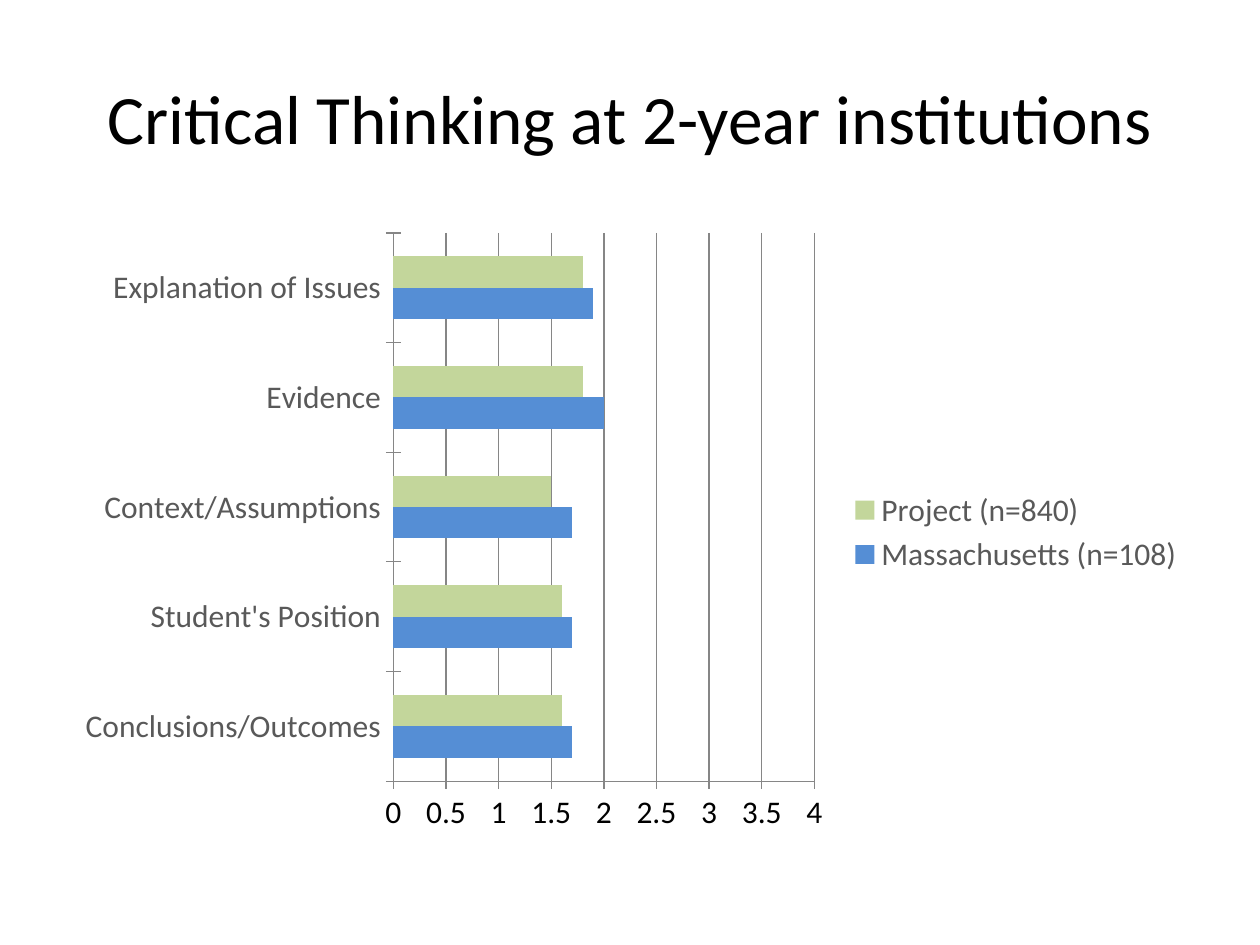
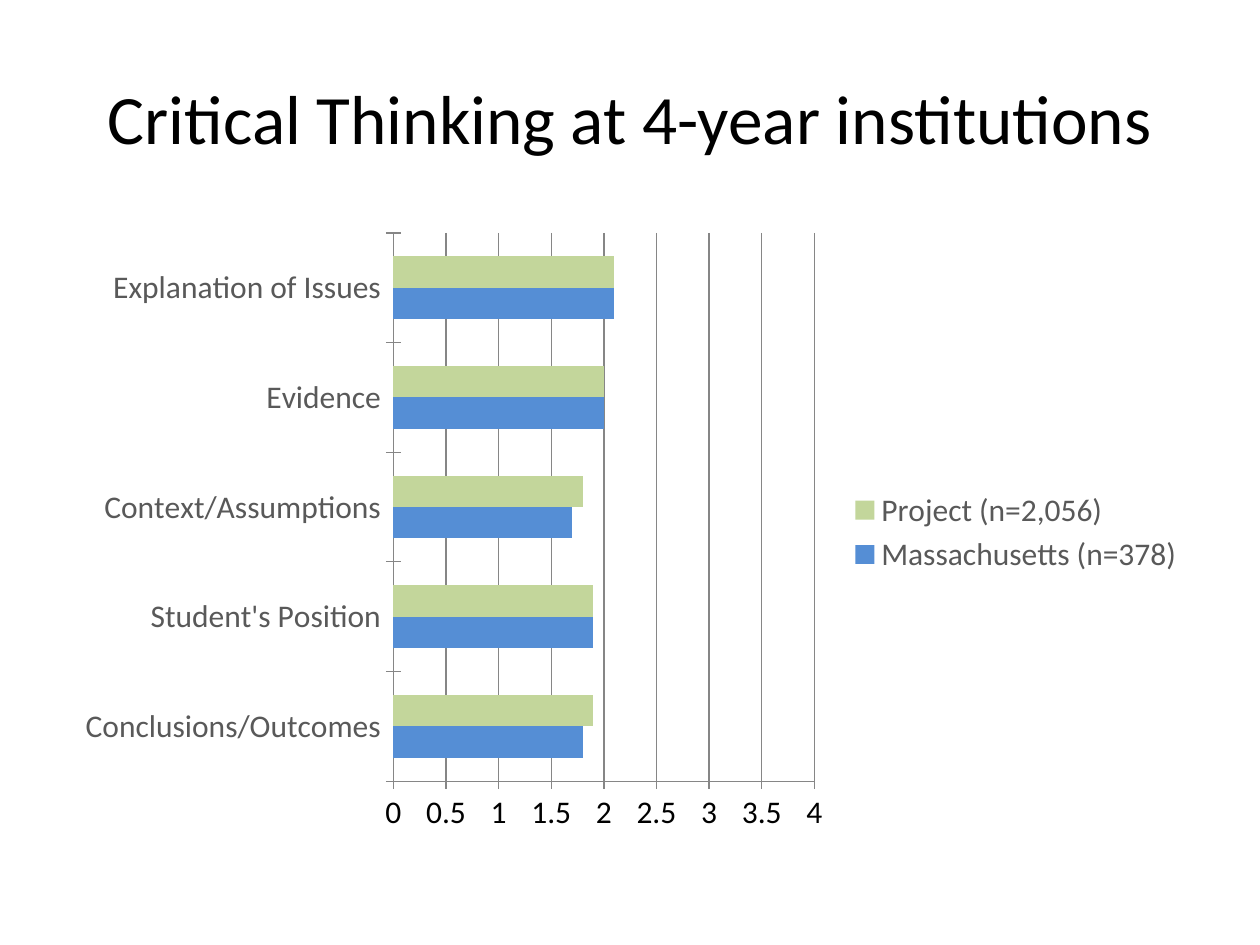
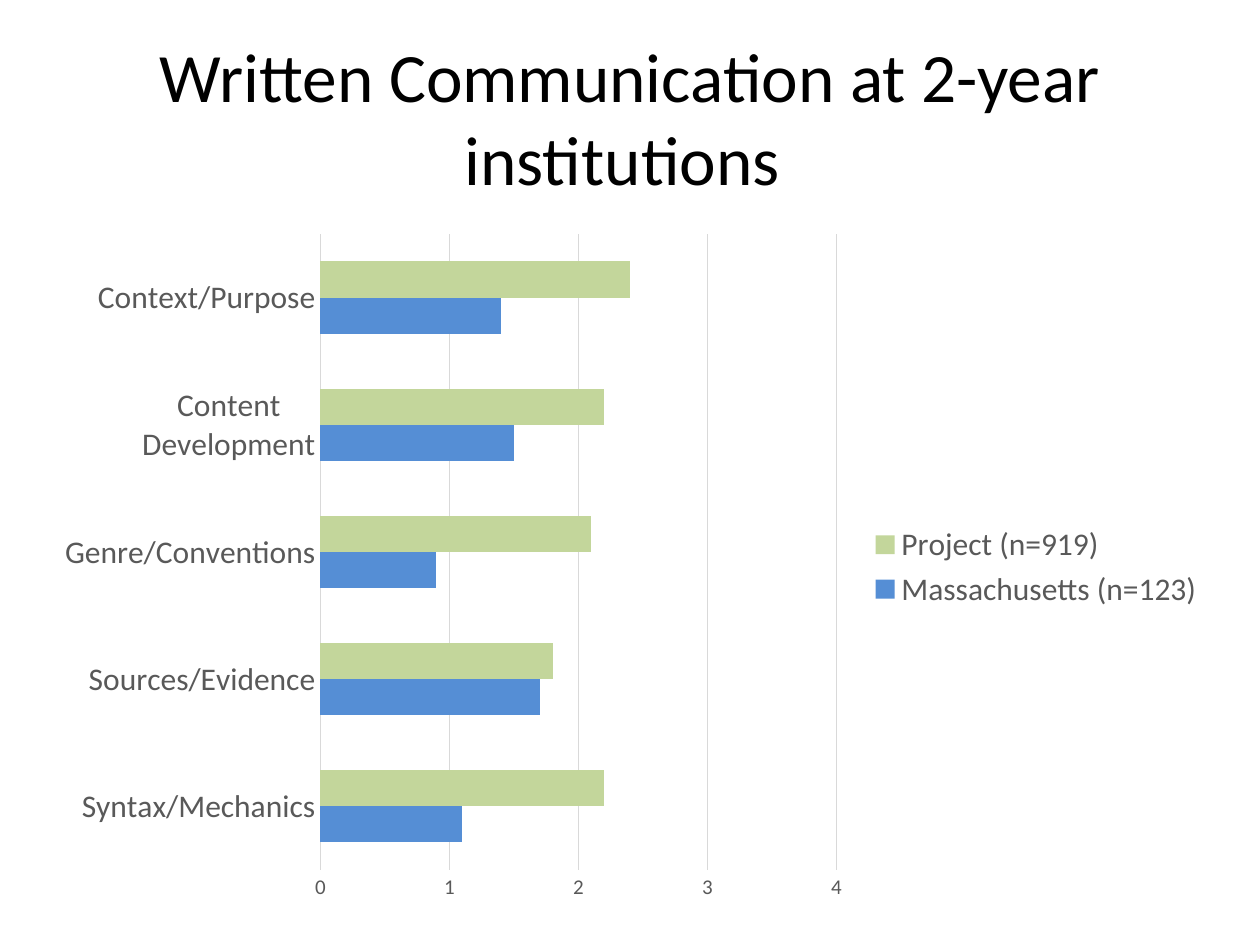
import dataclasses

import pptx
import pptx.chart.data
import pptx.dml.color
import pptx.enum.chart
import pptx.enum.text
import pptx.util

Inches = pptx.util.Inches
Pt = pptx.util.Pt
RGB = pptx.dml.color.RGBColor.from_string
TickMark = pptx.enum.chart.XL_TICK_MARK


@dataclasses.dataclass(frozen=True)
class Theme:
    font: str = "Calibri"
    ink: str = "000000"
    muted: str = "595959"
    massachusetts: str = "558ED5"
    project: str = "C3D69B"
    axis_width: float = 0.75
    title_size: float = 39.6
    label_size: float = 18
    small_size: float = 12


@dataclasses.dataclass(frozen=True)
class AxisStyle:
    line: str
    value_line: bool
    tick: object
    step: float
    value_size: float
    value_color: str


THEME = Theme()
RULED = AxisStyle("868686", True, TickMark.CROSS, 0.5,
                  THEME.label_size, THEME.ink)
LIGHT = AxisStyle("D9D9D9", False, TickMark.NONE, 1,
                  THEME.small_size, THEME.muted)

TITLE_BOX = (0.5, 0.3, 9, 1.25)
CRITICAL_BOX = (0.5, 1.75, 9, 4.95)
WRITTEN_BOX = (0.33, 1.75, 9.33, 5.5)

CRITICAL_SKILLS = ["Conclusions/Outcomes", "Student's Position",
                   "Context/Assumptions", "Evidence",
                   "Explanation of Issues"]
WRITTEN_SKILLS = ["Syntax/Mechanics", "Sources/Evidence",
                  "Genre/Conventions", "Content Development",
                  "Context/Purpose"]

SLIDES = [
    ("Critical Thinking at 2-year institutions",
     CRITICAL_BOX, RULED, CRITICAL_SKILLS,
     {"Massachusetts (n=108)": [1.7, 1.7, 1.7, 2, 1.9],
      "Project (n=840)": [1.6, 1.6, 1.5, 1.8, 1.8]}),
    ("Critical Thinking at 4-year institutions",
     CRITICAL_BOX, RULED, CRITICAL_SKILLS,
     {"Massachusetts (n=378)": [1.8, 1.9, 1.7, 2, 2.1],
      "Project (n=2,056)": [1.9, 1.9, 1.8, 2, 2.1]}),
    ("Written Communication at 2-year institutions ",
     WRITTEN_BOX, LIGHT, WRITTEN_SKILLS,
     {"Massachusetts (n=123)": [1.1, 1.7, 0.9, 1.5, 1.4],
      "Project (n=919)": [2.2, 1.8, 2.1, 2.2, 2.4]}),
]


def style_font(font, size=THEME.label_size, color=THEME.muted):
    font.name = THEME.font
    font.size = Pt(size)
    font.color.rgb = RGB(color)


def style_line(line, color):
    line.color.rgb = RGB(color)
    line.width = Pt(THEME.axis_width)


def write_text(frame, text, *, size, color, align):
    paragraph = frame.paragraphs[0]
    paragraph.alignment = align
    run = paragraph.add_run()
    run.text = text
    style_font(run.font, size, color)


def place_title(slide, box, text):
    title = slide.shapes.title
    title.left, title.top, title.width, title.height = map(Inches, box)
    frame = title.text_frame
    frame.word_wrap = True
    frame.auto_size = pptx.enum.text.MSO_AUTO_SIZE.NONE
    frame.vertical_anchor = pptx.enum.text.MSO_ANCHOR.MIDDLE
    write_text(frame, text, size=THEME.title_size, color=THEME.ink,
               align=pptx.enum.text.PP_ALIGN.CENTER)


def style_axes(chart, style):
    skills, scores = chart.category_axis, chart.value_axis
    for axis in (skills, scores):
        axis.major_tick_mark = style.tick
        axis.minor_tick_mark = TickMark.NONE
        axis.tick_labels.number_format = "General"
        axis.tick_labels.number_format_is_linked = False
        style_line(axis.format.line, style.line)
    if not style.value_line:
        scores.format.line.fill.background()
    skills.has_major_gridlines = False
    scores.has_major_gridlines = True
    style_line(scores.major_gridlines.format.line, style.line)
    scores.minimum_scale = 0
    scores.maximum_scale = 4
    scores.major_unit = style.step
    style_font(skills.tick_labels.font)
    style_font(scores.tick_labels.font, style.value_size, style.value_color)


def place_scores(slide, box, style, skills, groups):
    """Draw the mean score for each skill, one bar for each group."""
    data = pptx.chart.data.CategoryChartData()
    data.categories = skills
    for group, scores in groups.items():
        data.add_series(group, scores)
    chart = slide.shapes.add_chart(
        pptx.enum.chart.XL_CHART_TYPE.BAR_CLUSTERED,
        *map(Inches, box), data).chart
    chart.has_title = False
    style_font(chart.font, color=THEME.ink)
    style_axes(chart, style)

    bars = chart.plots[0]
    bars.vary_by_categories = False
    bars.gap_width = 150
    bars.overlap = 0
    for series, color in zip(bars.series,
                             (THEME.massachusetts, THEME.project)):
        series.format.fill.solid()
        series.format.fill.fore_color.rgb = RGB(color)

    chart.has_legend = True
    chart.legend.position = pptx.enum.chart.XL_LEGEND_POSITION.RIGHT
    chart.legend.include_in_layout = False
    style_font(chart.legend.font)


def main():
    deck = pptx.Presentation()
    deck.slide_width, deck.slide_height = Inches(10), Inches(7.5)
    title_only = deck.slide_layouts.get_by_name("Title Only")
    for title, box, style, skills, groups in SLIDES:
        slide = deck.slides.add_slide(title_only)
        place_title(slide, TITLE_BOX, title)
        place_scores(slide, box, style, skills, groups)
    deck.save("out.pptx")


if __name__ == "__main__":
    main()
